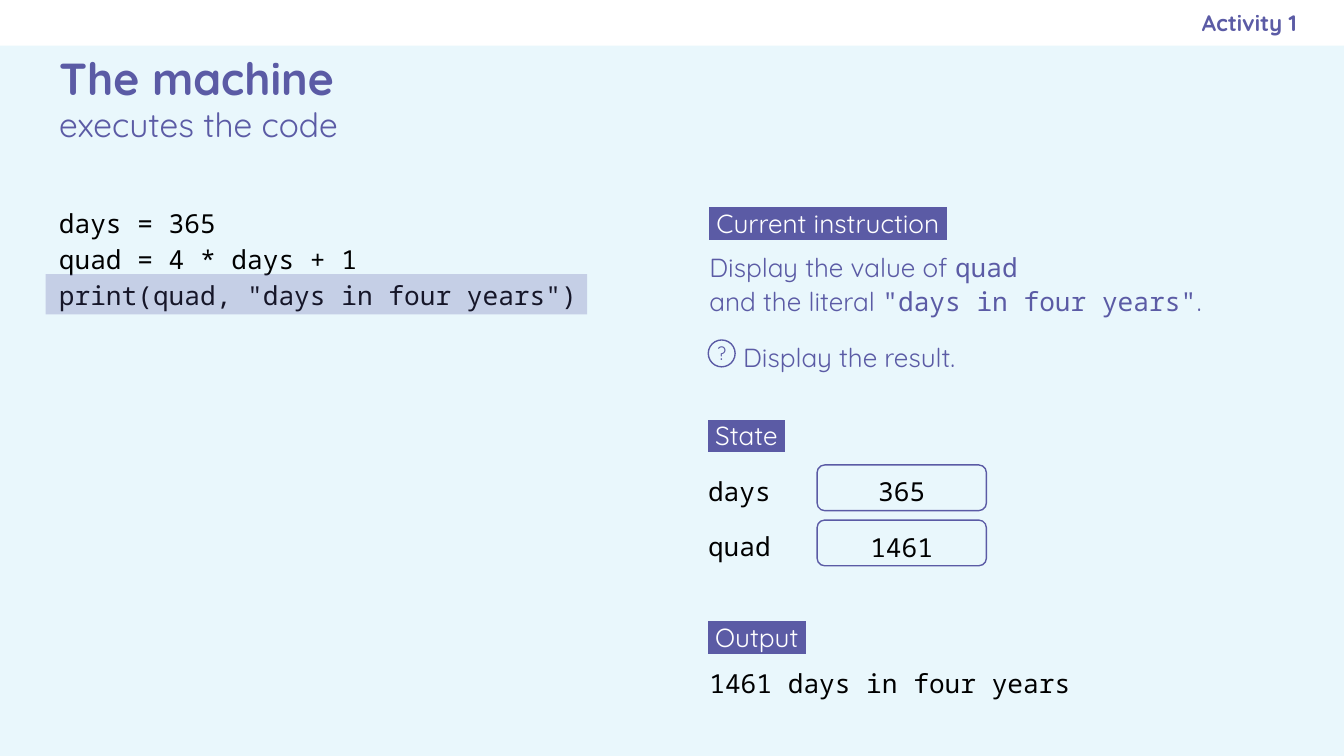
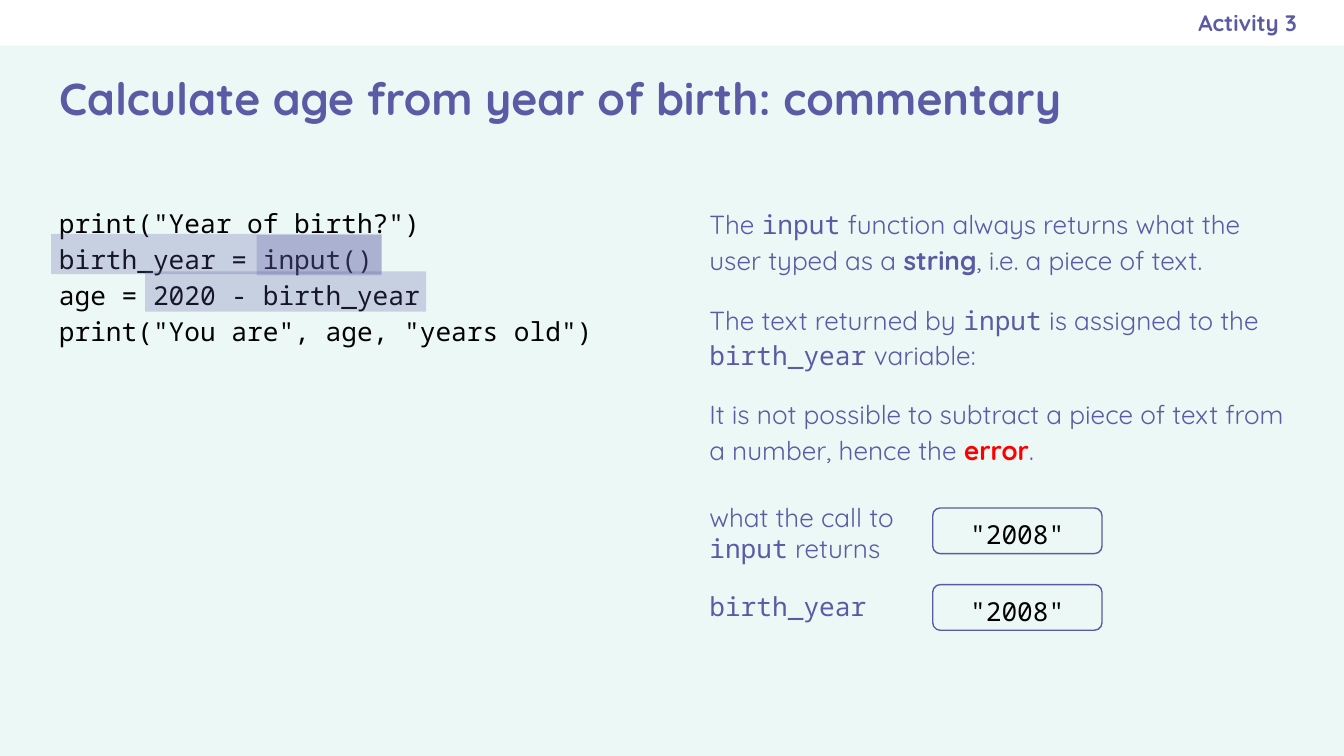
from dataclasses import dataclass, replace

from lxml.etree import SubElement as Sub
from pptx import Presentation
from pptx.dml.color import RGBColor
from pptx.enum.shapes import MSO_SHAPE as Form
from pptx.enum.text import MSO_ANCHOR as Anchor, MSO_AUTO_SIZE as Auto, PP_ALIGN as Align
from pptx.oxml.ns import qn
from pptx.util import Inches, Pt

INK = RGBColor(0x5B, 0x5B, 0xA5)
BLACK = RGBColor(0, 0, 0)
WHITE = RGBColor(255, 255, 255)
RED = RGBColor(255, 0, 0)
SKY = RGBColor(0xE9, 0xF7, 0xFC)
MINT = RGBColor(0xEC, 0xF8, 0xF5)


@dataclass(frozen=True)
class Style:
    """Look of one run of text."""
    font: str = "Quicksand"
    size: int = 14
    color: RGBColor = INK
    bold: bool = False
    mark: bool = False


BODY = Style()
BOLD = replace(BODY, bold=True)
ERROR = replace(BOLD, color=RED)
TERM = replace(BODY, font="Noto Sans Mono")
CODE = replace(TERM, color=BLACK)
TAG = replace(BODY, color=WHITE, mark=True)
HEAD = replace(BOLD, size=24)
SUB = replace(BODY, size=18)
NOTE = replace(BOLD, size=12)
HINT = replace(BODY, size=10)

TOP = 1.41
LEFT = 0.34
RIGHT = 5.18
WIDE = 4.47
BAND = 0.34


def write(frame, lines, align=Align.LEFT, gap=1.0, pad=(0.1, 0.1, 0.1, 0.1), anchor=Anchor.TOP):
    """Fill a text frame with lines, each a list of (text, style) runs."""
    frame.word_wrap = True
    frame.auto_size = Auto.NONE
    frame.vertical_anchor = anchor
    (frame.margin_left, frame.margin_top,
     frame.margin_right, frame.margin_bottom) = map(Inches, pad)
    for num, line in enumerate(lines):
        para = frame.add_paragraph() if num else frame.paragraphs[0]
        para.alignment = align
        para.line_spacing = gap
        for text, style in line:
            run = para.add_run()
            run.text = text
            font = run.font
            font.name = style.font
            font.size = Pt(style.size)
            font.bold = style.bold
            font.color.rgb = style.color
            if style.mark:
                props = run._r.get_or_add_rPr()
                light = Sub(props, qn("a:highlight"))
                Sub(light, qn("a:srgbClr"), val=str(INK))
                props.find(qn("a:solidFill")).addnext(light)


def text(slide, box, lines, **look):
    """Add a text box."""
    area = slide.shapes.add_textbox(*map(Inches, box))
    write(area.text_frame, lines, **look)


def shape(slide, form, box, fill=None, line=None, alpha=None):
    """Add a flat shape with optional fill, outline and opacity."""
    item = slide.shapes.add_shape(form, *map(Inches, box))
    item.shadow.inherit = False
    if fill is None:
        item.fill.background()
    else:
        item.fill.solid()
        item.fill.fore_color.rgb = fill
    if alpha:
        tint = item._element.spPr.find(qn("a:solidFill"))[0]
        Sub(tint, qn("a:alpha"), val=str(alpha * 1000))
    if line is None:
        item.line.fill.background()
    else:
        item.line.color.rgb = line
        item.line.width = Pt(0.75)
    return item


def base(deck, back, note, title):
    """Start a slide with background, top band, note and title."""
    slide = deck.slides.add_slide(deck.slide_layouts[5])
    slide.background.fill.solid()
    slide.background.fill.fore_color.rgb = back
    shape(slide, Form.RECTANGLE, (0, 0, 10, BAND), WHITE)
    text(slide, (5.75, 0, 3.9, BAND), [[(note, NOTE)]], align=Align.RIGHT,
         pad=(0.1, 0.1, 0, 0.1), anchor=Anchor.MIDDLE)
    head = slide.shapes.title
    head.left, head.top, head.width, head.height = map(Inches, (LEFT, BAND, 9.32, 0.77))
    write(head.text_frame, title, anchor=Anchor.MIDDLE)
    return slide


def code(slide, box, lines, marks):
    """Show code lines with see-through marks given as (x, y, width)."""
    left, top = box[:2]
    text(slide, box, [[(line, CODE)] for line in lines], gap=1.15)
    for x, y, wide in marks:
        shape(slide, Form.RECTANGLE, (left + x, top + y, wide, 0.3), INK, alpha=25)


def prose(slide, box, *runs, inset=0.1):
    """Add one paragraph of the right column."""
    text(slide, box, [runs], gap=1.14, pad=(inset, 0.1, 0.06, 0.1))


def value(slide, box, runs, shown, shift, drop=0.06, gap=1.15):
    """Show a label and, beside it, its value in a rounded frame."""
    left, top = box[:2]
    text(slide, box, [runs], gap=gap)
    frame = shape(slide, Form.ROUNDED_RECTANGLE,
                  (left + shift, top + drop, 1.26, 0.34), line=INK)
    write(frame.text_frame, [[(shown, CODE)]], align=Align.CENTER, gap=1.15,
          pad=(0.1, 0.02, 0.1, 0), anchor=Anchor.MIDDLE)


def hint(slide, box, words):
    """Add a line led by a question mark in a circle."""
    left, top = box[:2]
    prose(slide, box, (words, BODY), inset=0.36)
    ring = shape(slide, Form.OVAL, (left + 0.1, top + 0.12, 0.2, 0.2), line=INK)
    write(ring.text_frame, [[("?", HINT)]], align=Align.CENTER,
          pad=(0, 0, 0, 0), anchor=Anchor.MIDDLE)


def machine(deck):
    """Build the slide that traces the program."""
    slide = base(deck, SKY, "Activity 1",
                 [[("The machine", HEAD)], [("executes the code", SUB)]])
    code(slide, (LEFT, TOP, 4.84, 1),
         ["days = 365", "quad = 4 * days + 1", 'print(quad, "days in four years")'],
         [(0, 0.63, 4.03)])
    for x, y, wide, tag in ((RIGHT, TOP, WIDE, "Current instruction"),
                            (5.17, 2.99, 3.9, "State"), (5.17, 4.49, 3.9, "Output")):
        prose(slide, (x, y, wide, 0.4), (f" {tag} ", TAG))
    prose(slide, (RIGHT, 1.74, WIDE, 0.7), ("Display the value of ", BODY), ("quad", TERM))
    prose(slide, (RIGHT, 1.99, WIDE, 0.4), ("and the literal ", BODY),
          ('"days in four years"', TERM), (".", BODY))
    hint(slide, (5.17, 2.41, 3.9, 0.4), "Display the result.")
    for row, (name, shown) in enumerate((("days", "365"), ("quad", "1461"))):
        value(slide, (5.17, 3.4 + 0.41 * row, 1.5, 0.4), [(name, CODE)], shown, 0.91)
    prose(slide, (RIGHT, 4.83, WIDE, 0.4), ("1461 days in four years", CODE))


def age(deck):
    """Build the slide that comments on the age program."""
    slide = base(deck, MINT, "Activity 3",
                 [[("Calculate age from year of birth: commentary", HEAD)]])
    code(slide, (LEFT, TOP, 4.84, 1.3),
         ['print("Year of birth?")', "birth_year = input()",
          "age = 2020 - birth_year", 'print("You are", age, "years old")'],
         [(1.57, 0.34, 0.93), (0.74, 0.61, 2.09), (0.04, 0.33, 2.46)])
    prose(slide, (RIGHT, 1.42, WIDE, 0.7), ("The ", BODY), ("input", TERM),
          (" function always returns what the user typed as a ", BODY),
          ("string", BOLD), (", i.e. a piece of text.", BODY))
    prose(slide, (RIGHT, 2.13, WIDE, 0.64), ("The text returned by ", BODY),
          ("input", TERM), (" is assigned to the ", BODY),
          ("birth_year", TERM), (" variable:", BODY))
    prose(slide, (RIGHT, 2.83, WIDE, 0.7),
          ("It is not possible to subtract a piece of text from a number, hence the ", BODY),
          ("error", ERROR), (".", BODY))
    value(slide, (RIGHT, 3.63, 1.6, 0.64),
          [("what the call to ", BODY), ("input", TERM), (" returns", BODY)],
          '"2008"', 1.76, drop=0.15, gap=1.0)
    value(slide, (RIGHT, 4.29, 1.6, 0.34), [("birth_year", TERM)], '"2008"', 1.76, gap=1.0)


def main():
    """Build and save the deck at 16:9."""
    deck = Presentation()
    deck.slide_width = Inches(10)
    deck.slide_height = Inches(10) * 9 // 16
    machine(deck)
    age(deck)
    deck.save("out.pptx")


if __name__ == "__main__":
    main()
